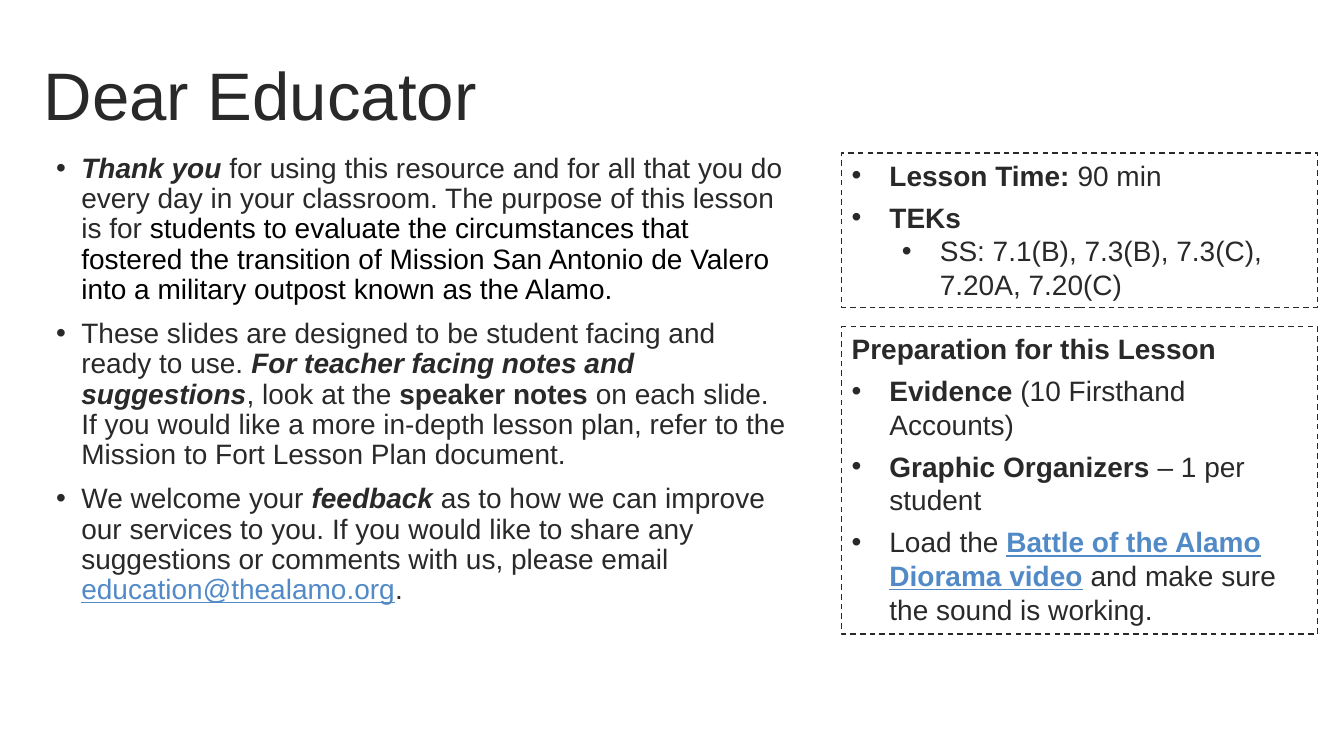
import pptx
import pptx.util
import pptx.dml.color
import pptx.enum.dml
import pptx.enum.shapes
import pptx.enum.text
import pptx.oxml.ns
from lxml import etree

Pt = pptx.util.Pt
FONT = "Arial"
COLORS = {"text": "292929", "black": "000000", "link": "528AC7"}

# Each paragraph is a list of (text, style) runs; a style names a colour
# or holds the letters b (bold) and i (italic)
LETTER = [
    [("Thank you", "bi"),
     (" for using this resource and for all that you do every day in your classroom. "
      "The purpose of this lesson is for ", ""),
     ("students to evaluate the circumstances that fostered the transition of Mission "
      "San Antonio de Valero into a military outpost known as the Alamo. ", "black")],
    [("These slides are designed to be student facing and ready to use. ", ""),
     ("For teacher facing notes and suggestions", "bi"),
     (", look at the ", ""),
     ("speaker notes ", "b"),
     ("on each slide. If you would like a more in-depth lesson plan, refer to the "
      "Mission to Fort Lesson Plan document. ", "")],
    [("We welcome your ", ""),
     ("feedback ", "bi"),
     ("as to how we can improve our services to you. If you would like to share any "
      "suggestions or comments with us, please email ", ""),
     ("education@thealamo.org", "link"),
     (".", "")],
]

# Card paragraphs: (left margin or None for no bullet, space after, runs)
TIME = [
    (27, 6, [("Lesson Time:", "b"), (" 90 min", "")]),
    (27, 0, [("TEKs", "b")]),
    (63, 0, [("SS: 7.1(B), 7.3(B), 7.3(C), 7.20A, 7.20(C)", "")]),
]
PREPARATION = [
    (None, 6, [("Preparation for this Lesson", "b")]),
    (27, 6, [("Evidence ", "b"), ("(10 Firsthand Accounts)", "")]),
    (27, 6, [("Graphic Organizers ", "b"), ("– 1 per student", "")]),
    (27, 6, [("Load the ", ""), ("Battle of the Alamo Diorama video", "b link"),
             (" and make sure the sound is working.", "")]),
]


def rgb(name):
    return pptx.dml.color.RGBColor.from_string(COLORS[name])


def add_bullet(p, margin, hanging):
    pPr = p._p.get_or_add_pPr()
    pPr.set("marL", str(Pt(margin)))
    pPr.set("indent", str(-Pt(hanging)))
    etree.SubElement(pPr, pptx.oxml.ns.qn("a:buFont")).set("typeface", FONT)
    etree.SubElement(pPr, pptx.oxml.ns.qn("a:buChar")).set("char", "•")


def add_runs(p, runs, size=20):
    p.alignment = pptx.enum.text.PP_ALIGN.LEFT
    for text, style in runs:
        r = p.add_run()
        r.text = text
        words = style.split()
        color = next((word for word in words if word in COLORS), "text")
        flags = "".join(word for word in words if word not in COLORS)
        r.font.name = FONT
        r.font.size = Pt(size)
        r.font.bold = "b" in flags
        r.font.italic = "i" in flags
        r.font.underline = color == "link"
        r.font.color.rgb = rgb(color)


def paragraphs(tf, items):
    for i, item in enumerate(items):
        yield (tf.add_paragraph() if i else tf.paragraphs[0]), item


def add_title(s, box, text):
    tf = s.shapes.add_textbox(*map(Pt, box)).text_frame
    tf.word_wrap = True
    tf.vertical_anchor = pptx.enum.text.MSO_ANCHOR.MIDDLE
    p = tf.paragraphs[0]
    p.line_spacing = 0.9
    add_runs(p, [(text, "")], 48)


def add_letter(s, box, items):
    tf = s.shapes.add_textbox(*map(Pt, box)).text_frame
    tf.word_wrap = True
    for p, runs in paragraphs(tf, items):
        add_bullet(p, 18, 18)
        p.line_spacing = 0.9
        p.space_before = Pt(0 if runs is items[0] else 10)
        add_runs(p, runs)


def add_card(s, box, items):
    sp = s.shapes.add_shape(pptx.enum.shapes.MSO_SHAPE.RECTANGLE, *map(Pt, box))
    sp.shadow.inherit = False
    sp.fill.background()
    sp.line.color.rgb = rgb("text")
    sp.line.width = Pt(1)
    sp.line.dash_style = pptx.enum.dml.MSO_LINE.DASH
    tf = sp.text_frame
    tf.word_wrap = True
    tf.auto_size = pptx.enum.text.MSO_AUTO_SIZE.SHAPE_TO_FIT_TEXT
    tf.vertical_anchor = pptx.enum.text.MSO_ANCHOR.TOP
    for p, (margin, after, runs) in paragraphs(tf, items):
        if margin is not None:
            add_bullet(p, margin, 27)
        p.space_after = Pt(after)
        add_runs(p, runs)


def main():
    prs = pptx.Presentation()
    prs.slide_width, prs.slide_height = Pt(960), Pt(540)
    s = prs.slides.add_slide(prs.slide_layouts[6])

    # Heading and letter on the left
    add_title(s, (24, 18, 913, 104.4), "Dear Educator")
    add_letter(s, (33, 106.6, 538, 340), LETTER)

    # Lesson cards on the right
    card_left, card_width = 601.2, 339.8
    add_card(s, (card_left, 233.3, card_width, 219.6), PREPARATION)
    add_card(s, (card_left, 109.4, card_width, 110.2), TIME)

    prs.save("out.pptx")


if __name__ == "__main__":
    main()
